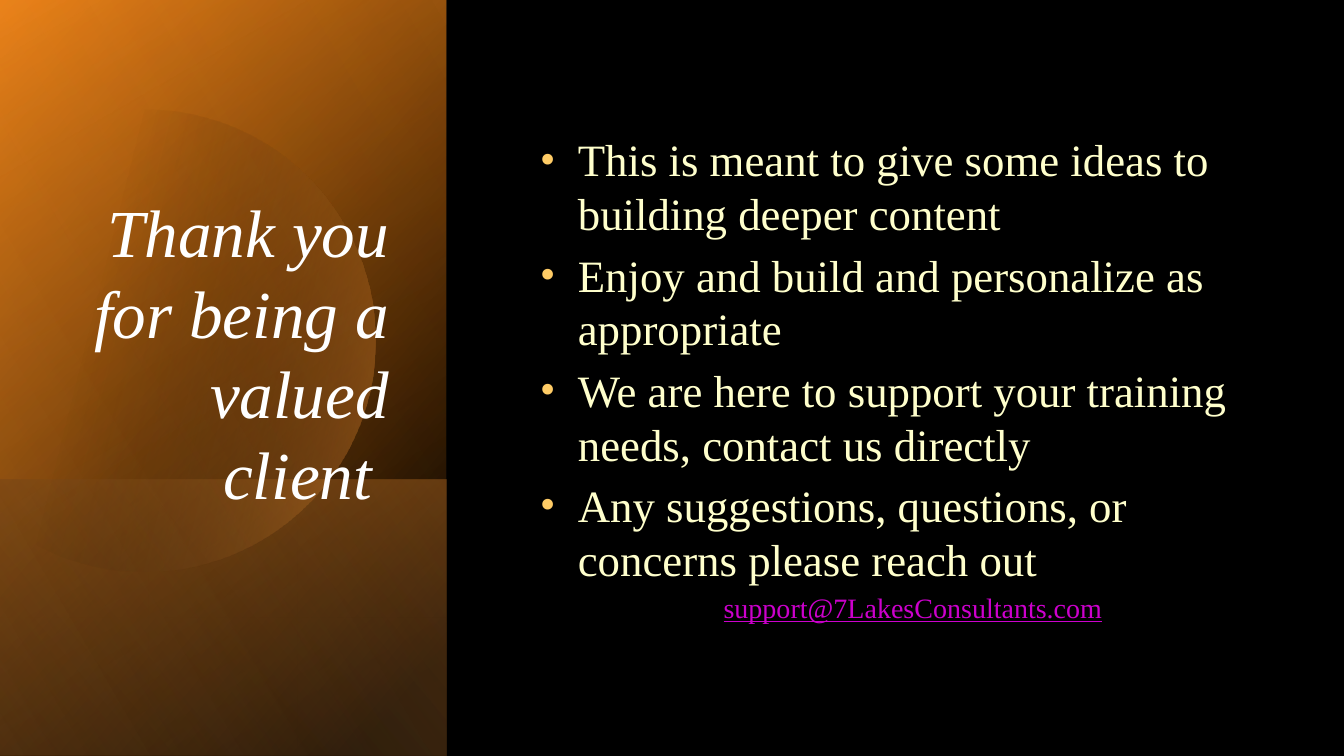
import math

import pptx
import pptx.dml.color
import pptx.enum.shapes
import pptx.enum.text
import pptx.oxml.ns
import pptx.util
from lxml import etree

RGB = pptx.dml.color.RGBColor
BLACK = RGB(0x00, 0x00, 0x00)
WHITE = RGB(0xFF, 0xFF, 0xFF)
CREAM = RGB(0xFF, 0xFF, 0xCC)
GOLD = RGB(0xFF, 0xCC, 0x66)
BURNT = RGB(0xE5, 0x73, 0x00)
ORANGE = RGB(0xFF, 0x99, 0x33)
PEACH = RGB(0xFF, 0xC2, 0x85)
MAGENTA = RGB(0xCC, 0x00, 0xCC)

ALIGN = pptx.enum.text.PP_ALIGN
ANCHOR = pptx.enum.text.MSO_ANCHOR
EMU_PER_PX = 914400 / 100.8
qn = pptx.oxml.ns.qn


def px(n):
    return pptx.util.Emu(round(n * EMU_PER_PX))


class Deck:
    font = "Times New Roman"

    def __init__(self, width, height):
        self.prs = pptx.Presentation()
        self.prs.slide_width, self.prs.slide_height = px(width), px(height)

    def add_slide(self, background):
        self.s = self.prs.slides.add_slide(self.prs.slide_layouts[6])
        self.s.background.fill.solid()
        self.s.background.fill.fore_color.rgb = background

    def shade(self, sp, angle, stops):
        """Fill with a clockwise gradient; stops are (position %, colour, opacity %)."""
        sp.shadow.inherit = False
        sp.line.fill.background()
        sp.fill.gradient()
        sp.fill.gradient_angle = 360 - angle
        for stop, (position, color, _) in zip(sp.fill.gradient_stops, stops):
            stop.position = position / 100
            stop.color.rgb = color
        colors = sp._element.spPr.find(qn("a:gradFill")).iter(qn("a:srgbClr"))
        for clr, (_, _, opacity) in zip(colors, stops):
            etree.SubElement(clr, qn("a:alpha"), val=str(opacity * 1000))

    def panel(self, x, y, w, h, angle, *stops):
        kind = pptx.enum.shapes.MSO_SHAPE.RECTANGLE
        sp = self.s.shapes.add_shape(kind, px(x), px(y), px(w), px(h))
        self.shade(sp, angle, stops)

    def disc(self, cx, cy, radius, angle, *stops):
        """Circle cut off by the left edge of the slide."""
        reach = math.degrees(math.acos(-cx / radius))
        turns = [math.radians(-reach + 2 * reach * i / 120) for i in range(121)]
        points = [(px(cx + radius * math.cos(t)), px(cy + radius * math.sin(t)))
                  for t in turns]
        fb = self.s.shapes.build_freeform(*points[0])
        fb.add_line_segments(points[1:], close=True)
        self.shade(fb.convert_to_shape(), angle, stops)

    def text_box(self, x, y, w, h, anchor):
        tf = self.s.shapes.add_textbox(px(x), px(y), px(w), px(h)).text_frame
        tf.word_wrap = True
        tf.vertical_anchor = anchor
        return tf

    def style(self, r, size, color, italic=False, underline=False):
        r.font.name = self.font
        r.font.size = pptx.util.Pt(size)
        r.font.color.rgb = color
        r.font.italic = italic
        r.font.underline = underline

    def indent(self, p, margin, hanging=0):
        pPr = p._p.get_or_add_pPr()
        pPr.set("marL", str(px(margin)))
        pPr.set("indent", str(-px(hanging)))
        return pPr

    def bullet(self, p, color):
        pPr = self.indent(p, 38, 38)
        clr = etree.SubElement(pPr, qn("a:buClr"))
        etree.SubElement(clr, qn("a:srgbClr"), val=str(color))
        etree.SubElement(pPr, qn("a:buFont"), typeface=self.font)
        etree.SubElement(pPr, qn("a:buChar"), char="•")


def main():
    deck = Deck(1344, 756)
    deck.add_slide(BLACK)

    # Glowing side panel
    side = (0, 0, 446, 756)
    deck.panel(*side, 220, (8, BLACK, 100), (100, BURNT, 100))
    deck.panel(*side, 240, (0, BLACK, 0), (99, ORANGE, 46))
    deck.panel(0, 480, 446, 276, 140, (2, ORANGE, 29), (100, BLACK, 30))
    deck.disc(144, 341, 231, 14, (29, BLACK, 0), (100, ORANGE, 43))
    deck.panel(*side, 150, (0, BLACK, 0), (99, PEACH, 11))

    # Title
    tf = deck.text_box(46, 138, 353, 380, ANCHOR.BOTTOM)
    p = tf.paragraphs[0]
    p.text = "Thank you for being a valued client "
    p.alignment = ALIGN.RIGHT
    deck.style(p.runs[0], 48, WHITE, italic=True)

    # Closing points
    tf = deck.text_box(530, 72, 723, 612, ANCHOR.MIDDLE)
    tf.text = "\n".join([
        "This is meant to give some ideas to building deeper content",
        "Enjoy and build and personalize as appropriate",
        "We are here to support your training needs, contact us directly",
        "Any suggestions, questions, or concerns please reach out",
    ])
    for p in tf.paragraphs:
        p.space_before = pptx.util.Pt(5.5)
        deck.bullet(p, GOLD)
        deck.style(p.runs[0], 32, CREAM)

    # Contact address
    p = tf.add_paragraph()
    p.text = "support@7LakesConsultants.com"
    p.alignment = ALIGN.CENTER
    p.space_before = pptx.util.Pt(3.5)
    deck.indent(p, 50)
    deck.style(p.runs[0], 20, MAGENTA, underline=True)
    r = p.add_run()
    r.text = " "
    deck.style(r, 20, CREAM)

    deck.prs.save("out.pptx")


if __name__ == "__main__":
    main()
